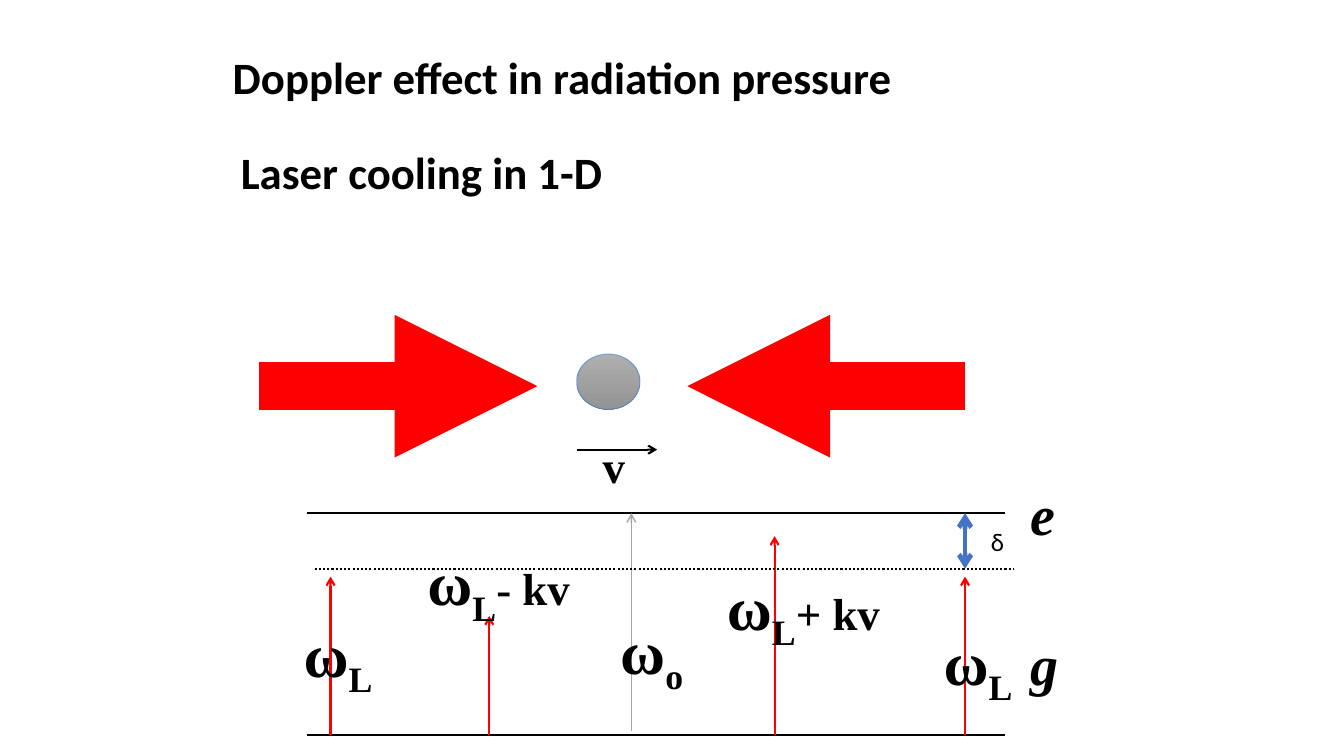
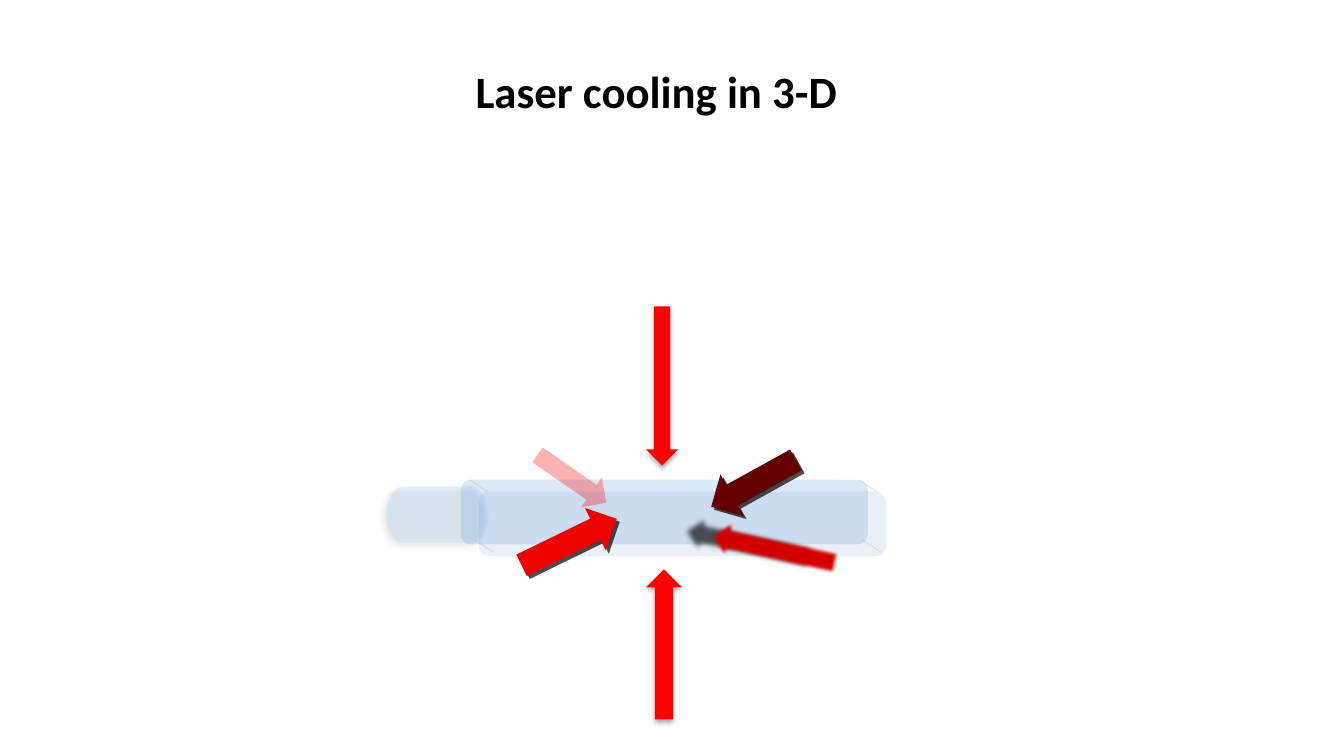
from lxml import etree
from pptx import Presentation
from pptx import util as u
from pptx.dml import color
from pptx.enum import dml, shapes, text
from pptx.oxml import ns

BLACK, RED, GREY, BLUE = "000000", "FF0000", "A5A5A5", "4472C4"
SANS, SERIF = "Calibri", "Times New Roman"
SHAPE = shapes.MSO_SHAPE
Cm = u.Cm


# Shared helpers
def paint(color_format, hex_value):
    color_format.rgb = color.RGBColor.from_string(hex_value)


def add_xml(parent, tag, **attributes):
    child = etree.SubElement(parent, ns.qn(tag))
    for name, value in attributes.items():
        child.set(name, str(value))
    return child


def set_opacity(parent, percent):
    for value in parent.iter(ns.qn("a:srgbClr")):
        add_xml(value, "a:alpha", val=percent * 1000)


def style_text(frame, size, font=SANS, bold=True, italic=False):
    frame.word_wrap = False
    paragraph = frame.paragraphs[0]
    paragraph.alignment = text.PP_ALIGN.LEFT
    paragraph.font.name = font
    paragraph.font.size = u.Pt(size)
    paragraph.font.bold = bold
    paragraph.font.italic = italic
    paint(paragraph.font.color, BLACK)
    return paragraph


def add_label(slide, left, top, width, height, words, size, **style):
    box = slide.shapes.add_textbox(Cm(left), Cm(top), Cm(width), Cm(height))
    box.text_frame.text = words
    style_text(box.text_frame, size, **style)
    box.text_frame.auto_size = text.MSO_AUTO_SIZE.SHAPE_TO_FIT_TEXT


def add_frequency(slide, left, top, width, subscript, shift=""):
    """Omega with a subscript and an optional Doppler shift."""
    box = slide.shapes.add_textbox(Cm(left), Cm(top), Cm(width), Cm(2.13))
    paragraph = style_text(box.text_frame, 44, font=SERIF)
    for words, size, baseline in (("ω", 44, 0), (subscript, 44, -25), (shift, 32, 0)):
        if words:
            run = paragraph.add_run()
            run.text = words
            run.font.size = u.Pt(size)
            if baseline:
                run._r.get_or_add_rPr().set("baseline", str(baseline * 1000))


def add_line(slide, start, end, hex_value, width, head=None, tail=None,
             dash=None, opacity=None):
    points = [Cm(value) for value in (*start, *end)]
    connector = slide.shapes.add_connector(shapes.MSO_CONNECTOR.STRAIGHT, *points)
    paint(connector.line.color, hex_value)
    connector.line.width = u.Pt(width)
    if dash:
        connector.line.dash_style = dash
    properties = connector._element.spPr
    outline = properties.find(ns.qn("a:ln"))
    if opacity:
        set_opacity(outline, opacity)
    for tag, kind in (("a:headEnd", head), ("a:tailEnd", tail)):
        if kind:
            add_xml(outline, tag, type=kind)
    add_xml(properties, "a:effectLst")


def add_solid(slide, kind, left, top, width, height, hex_value, rotation=0,
              opacity=None, shadow=None, soft_edge=None):
    """Filled shape; shadow is (opacity, blur, distance, direction)."""
    shape = slide.shapes.add_shape(kind, Cm(left), Cm(top), Cm(width), Cm(height))
    shape.rotation = rotation
    shape.line.fill.background()
    shape.fill.solid()
    paint(shape.fill.fore_color, hex_value)
    properties = shape._element.spPr
    if opacity:
        set_opacity(properties, opacity)
    shape.shadow.inherit = False
    effects = properties.find(ns.qn("a:effectLst"))
    if shadow:
        strength, blur, distance, direction = shadow
        outer = add_xml(effects, "a:outerShdw", blurRad=u.Pt(blur), dist=u.Pt(distance),
                        dir=direction * 60000, algn="ctr", rotWithShape=0)
        add_xml(outer, "a:srgbClr", val=BLACK)
        set_opacity(outer, strength)
    if soft_edge:
        add_xml(effects, "a:softEdge", rad=u.Pt(soft_edge))


def add_titled_slide(presentation, title, left, top, width):
    slide = presentation.slides.add_slide(presentation.slide_layouts[5])
    shape = slide.shapes.title
    shape.left, shape.top, shape.width, shape.height = map(Cm, (left, top, width, 1.63))
    shape.text_frame.text = title
    style_text(shape.text_frame, 32)
    shape.text_frame.auto_size = text.MSO_AUTO_SIZE.NONE
    return slide


# Regions of the 1-D slide
def draw_opposed_beams(slide, left, top, width):
    right, middle, beam = left + width, top + 0.81, 7.01
    add_line(slide, (left, middle), (left + beam, middle), RED, 34, tail="triangle")
    add_line(slide, (right, middle), (right - beam, middle), RED, 34, tail="triangle")

    # Atom and its velocity
    atom_left = left + 8
    atom = slide.shapes.add_shape(SHAPE.OVAL, Cm(atom_left), Cm(top), Cm(1.6), Cm(1.4))
    atom.shadow.inherit = False
    atom.fill.gradient()
    atom.fill.gradient_angle = 270
    for stop, hex_value in zip(atom.fill.gradient_stops, ("AFAFAF", "939393")):
        paint(stop.color, hex_value)
    paint(atom.line.color, "0066FF")
    atom.line.width = u.Pt(0.75)
    set_opacity(atom._element.spPr.find(ns.qn("a:ln")), 39)
    velocity_top = top + 2.41
    add_line(slide, (atom_left, velocity_top), (atom_left + 2.03, velocity_top),
             BLACK, 1.5, tail="arrow")
    add_label(slide, atom_left + 0.41, top + 2, 1.09, 1.63, "v", 32, font=SERIF)


def draw_energy_levels(slide, left, top, width, height):
    ground, detuned = top + height, top + 1.4

    # Excited and ground levels, then the transition
    for level in (top, ground):
        add_line(slide, (left, level), (left + width, level), BLACK, 1.5)
    add_line(slide, (left + 8.18, ground - 0.1), (left + 8.18, top), GREY, 1, tail="arrow")

    # Laser photons: offset from the left, gap below the excited level
    for across, gap in ((0.6, 1.6), (4.6, 2.59), (11.79, 0.58), (16.59, 1.6)):
        add_line(slide, (left + across, ground), (left + across, top + gap),
                 RED, 1.5, tail="arrow")

    # Frequencies
    for across, down, box_width, subscript, shift in (
            (15.8, 2.67, 2.36, "L", ""), (-0.33, 2.46, 2.36, "L", ""),
            (7.65, 2.39, 2.18, "o", ""), (2.79, 0.66, 4.22, "L", "- kv"),
            (10.34, 1.27, 4.5, "L", "+ kv")):
        add_frequency(slide, left + across, top + down, box_width, subscript, shift)

    # Detuning
    add_line(slide, (left + 0.2, detuned), (left + width + 0.2, detuned), BLACK, 1.5,
             dash=dml.MSO_LINE.ROUND_DOT)
    add_line(slide, (left + 16.59, top), (left + 16.59, detuned), BLUE, 3.25,
             head="arrow", tail="arrow")
    add_label(slide, left + 16.99, top + 0.2, 0.84, 1.02, "δ", 18, bold=False)

    # Level names
    for name, down in (("e", -0.97), ("g", 2.82)):
        add_label(slide, left + 17.98, top + down, 1.18, 1.96, name, 40,
                  font=SERIF, italic=True)


# Regions of the 3-D slide
def draw_vapour_cell(slide, left, top, width, height):
    depth_x, depth_y = 0.46, 0.3
    add_solid(slide, SHAPE.ROUNDED_RECTANGLE, left, top, width, height,
              "0F6FC6", opacity=15)
    add_solid(slide, SHAPE.ROUNDED_RECTANGLE, left + depth_x, top + depth_y,
              width, height, BLUE, opacity=10)
    for across, down in ((10.03, 0), (10.13, 1.52), (0.23, 0), (0.36, 1.52)):
        x, y = left + across, top + down
        add_line(slide, (x, y), (x + depth_x, y + depth_y), "AFABAB", 0.5, opacity=40)
    add_solid(slide, SHAPE.FLOWCHART_MAGNETIC_DISK, left - 1.3, top - 0.4, 1.42, 2.57,
              "91C6F7", rotation=90, opacity=20, shadow=(40, 4, 3, 135))


def draw_six_beams(slide, left, top):
    drop, edge = (32, 3.5, 2.2, 90), (70, 0, 3, 45)
    for kind, across, down, width, height, hex_value, effects in (
            (SHAPE.DOWN_ARROW, 4.67, -4.37, 0.81, 4.01, RED, {"shadow": drop}),
            (SHAPE.UP_ARROW, 4.67, 2.26, 0.91, 3.78, RED, {"shadow": drop}),
            (SHAPE.RIGHT_ARROW, 1.4, 0.97, 2.67, 1.2, "EE0000",
             {"rotation": 334, "shadow": edge}),
            (SHAPE.LEFT_ARROW, 6.16, -0.51, 2.44, 1.2, "620000",
             {"rotation": 331, "shadow": edge}),
            (SHAPE.LEFT_ARROW, 6.17, 1.12, 3.38, 1.27, "D60000",
             {"rotation": 12.3, "shadow": (65, 3, 19, 192), "soft_edge": 2.5}),
            (SHAPE.RIGHT_ARROW, 1.75, -0.48, 2.11, 0.91, RED,
             {"rotation": 34.7, "opacity": 30})):
        add_solid(slide, kind, left + across, top + down, width, height,
                  hex_value, **effects)


def main():
    presentation = Presentation()
    presentation.slide_width, presentation.slide_height = Cm(33.87), Cm(19.05)

    slide = add_titled_slide(presentation, "Doppler effect in radiation pressure",
                             5.61, 1.12, 17.3)
    add_label(slide, 5.82, 3.53, 9.7, 1.63, "Laser cooling in 1-D", 32)
    draw_opposed_beams(slide, 6.53, 8.92, 17.8)
    draw_energy_levels(slide, 7.73, 12.93, 17.6, 5.59)

    slide = add_titled_slide(presentation, "Laser cooling in 3-D", 11.73, 1.47, 11)
    draw_vapour_cell(slide, 11.61, 12.09, 10.26, 1.63)
    draw_six_beams(slide, 11.61, 12.09)

    presentation.save("out.pptx")


if __name__ == "__main__":
    main()
